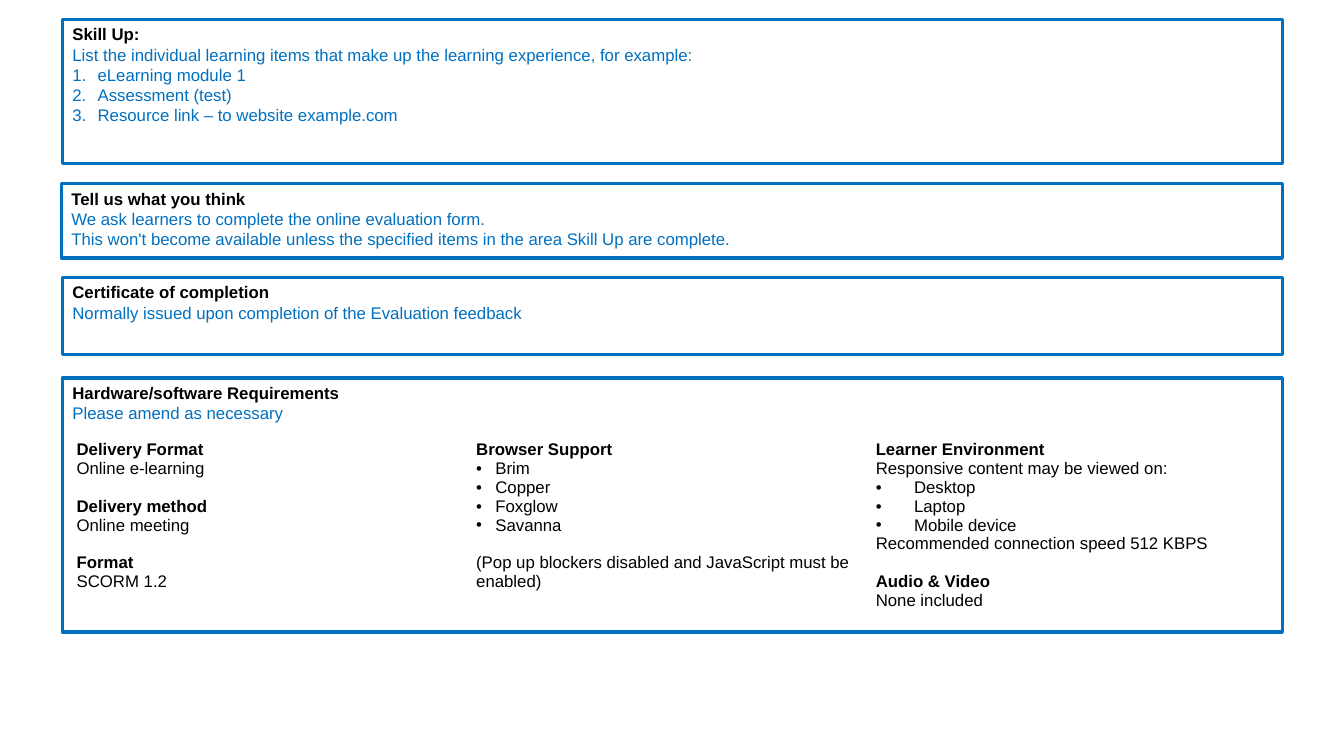
"""Builds a course summary slide with framed sections and a requirements table."""
from dataclasses import dataclass

from lxml import etree
from pptx import Presentation
from pptx import util as u
from pptx.dml.color import RGBColor
from pptx.enum import shapes, text
from pptx.oxml.ns import qn


@dataclass(frozen=True)
class Theme:
    font: str = "Arial"
    size: int = 12
    gap: float = 13.5
    edge: float = 2.25
    blue: RGBColor = RGBColor(0x00, 0x70, 0xC0)
    black: RGBColor = RGBColor(0, 0, 0)
    white: RGBColor = RGBColor(255, 255, 255)


@dataclass(frozen=True)
class Line:
    words: str
    bold: bool = False
    mark: str = ""
    indent: float = 0
    gap: bool = False


@dataclass(frozen=True)
class Panel:
    left: float
    top: float
    width: float
    height: float
    head: str
    lines: tuple[Line, ...]
    filled: bool = True


THEME = Theme()

PANELS = (
    Panel(0.62, 0.19, 12.1, 1.43, "Skill Up:", (
        Line("List the individual learning items that make up the learning experience, for example:"),
        *(Line(item, mark="1.", indent=0.25) for item in (
            "eLearning module 1", "Assessment (test)", "Resource link – to website example.com")),
    )),
    Panel(0.62, 2.75, 12.1, 0.77, "Certificate of completion", (
        Line("Normally issued upon completion of the Evaluation feedback"),
    )),
    Panel(0.61, 1.82, 12.11, 0.74, "Tell us what you think", (
        Line("We ask learners to complete the online evaluation form."),
        Line("This won't become available unless the specified items in the area Skill Up are complete."),
    )),
)

NEEDS = Panel(0.62, 3.75, 12.1, 2.52, "Hardware/software Requirements",
              (Line("Please amend as necessary"),), filled=False)

COLUMNS = (
    (
        Line("Delivery Format", bold=True),
        Line("Online e-learning"),
        Line("Delivery method", bold=True, gap=True),
        Line("Online meeting"),
        Line("Format", bold=True, gap=True),
        Line("SCORM 1.2"),
    ),
    (
        Line("Browser Support", bold=True),
        *(Line(name, mark="•", indent=0.19) for name in ("Brim", "Copper", "Foxglow", "Savanna")),
        Line("(Pop up blockers disabled and JavaScript must be enabled)", gap=True),
    ),
    (
        Line("Learner Environment", bold=True),
        Line("Responsive content may be viewed on:"),
        *(Line(name, mark="•", indent=0.38) for name in ("Desktop", "Laptop", "Mobile device")),
        Line("Recommended connection speed 512 KBPS"),
        Line("Audio & Video", bold=True, gap=True),
        Line("None included"),
    ),
)


def add_mark(para, mark: str, indent: float) -> None:
    props = para._p.get_or_add_pPr()
    props.set("marL", str(u.Inches(indent)))
    props.set("indent", str(-u.Inches(indent)))
    if mark == "1.":
        etree.SubElement(props, qn("a:buAutoNum"), type="arabicPeriod")
    else:
        etree.SubElement(props, qn("a:buFont"), typeface=THEME.font)
        etree.SubElement(props, qn("a:buChar"), char=mark)


def write(para, words: str, *, color: RGBColor, bold: bool = False,
          mark: str = "", indent: float = 0, gap: bool = False) -> None:
    para.alignment = text.PP_ALIGN.LEFT
    if gap:
        para.space_before = u.Pt(THEME.gap)
    if mark:
        add_mark(para, mark, indent)
    run = para.add_run()
    run.text = words
    run.font.name = THEME.font
    run.font.size = u.Pt(THEME.size)
    run.font.bold = bold
    run.font.color.rgb = color


def fill_text(frame, lines: tuple[Line, ...], color: RGBColor) -> None:
    for i, line in enumerate(lines):
        para = frame.paragraphs[0] if i == 0 else frame.add_paragraph()
        write(para, line.words, color=THEME.black if line.bold else color, bold=line.bold,
              mark=line.mark, indent=line.indent, gap=line.gap)


def add_panel(slide, panel: Panel) -> None:
    box = slide.shapes.add_shape(
        shapes.MSO_SHAPE.RECTANGLE, u.Inches(panel.left), u.Inches(panel.top),
        u.Inches(panel.width), u.Inches(panel.height))
    box.shadow.inherit = False
    if panel.filled:
        box.fill.solid()
        box.fill.fore_color.rgb = THEME.white
    else:
        box.fill.background()
    box.line.color.rgb = THEME.blue
    box.line.width = u.Pt(THEME.edge)
    box.text_frame.word_wrap = True
    box.text_frame.vertical_anchor = text.MSO_ANCHOR.TOP
    fill_text(box.text_frame, (Line(panel.head, bold=True), *panel.lines), THEME.blue)


def add_grid(slide, columns: tuple[tuple[Line, ...], ...]) -> None:
    grid = slide.shapes.add_table(
        1, len(columns), u.Inches(0.69), u.Inches(4.37), u.Inches(11.89), u.Inches(2.2)).table
    grid.first_row = grid.horz_banding = False
    for cell, lines in zip(grid.rows[0].cells, columns):
        cell.margin_left = cell.margin_right = u.Inches(0.07)
        cell.margin_top = cell.margin_bottom = 0
        fill_text(cell.text_frame, lines, THEME.black)
        props = cell._tc.get_or_add_tcPr()
        for side in ("a:lnL", "a:lnR", "a:lnT", "a:lnB"):
            etree.SubElement(etree.SubElement(props, qn(side), w="0"), qn("a:noFill"))
        cell.fill.background()


def main() -> None:
    deck = Presentation()
    deck.slide_width, deck.slide_height = u.Inches(13.33), u.Inches(7.5)
    slide = deck.slides.add_slide(deck.slide_layouts[6])
    for panel in PANELS:
        add_panel(slide, panel)
    add_grid(slide, COLUMNS)
    add_panel(slide, NEEDS)
    deck.save("out.pptx")


if __name__ == "__main__":
    main()
